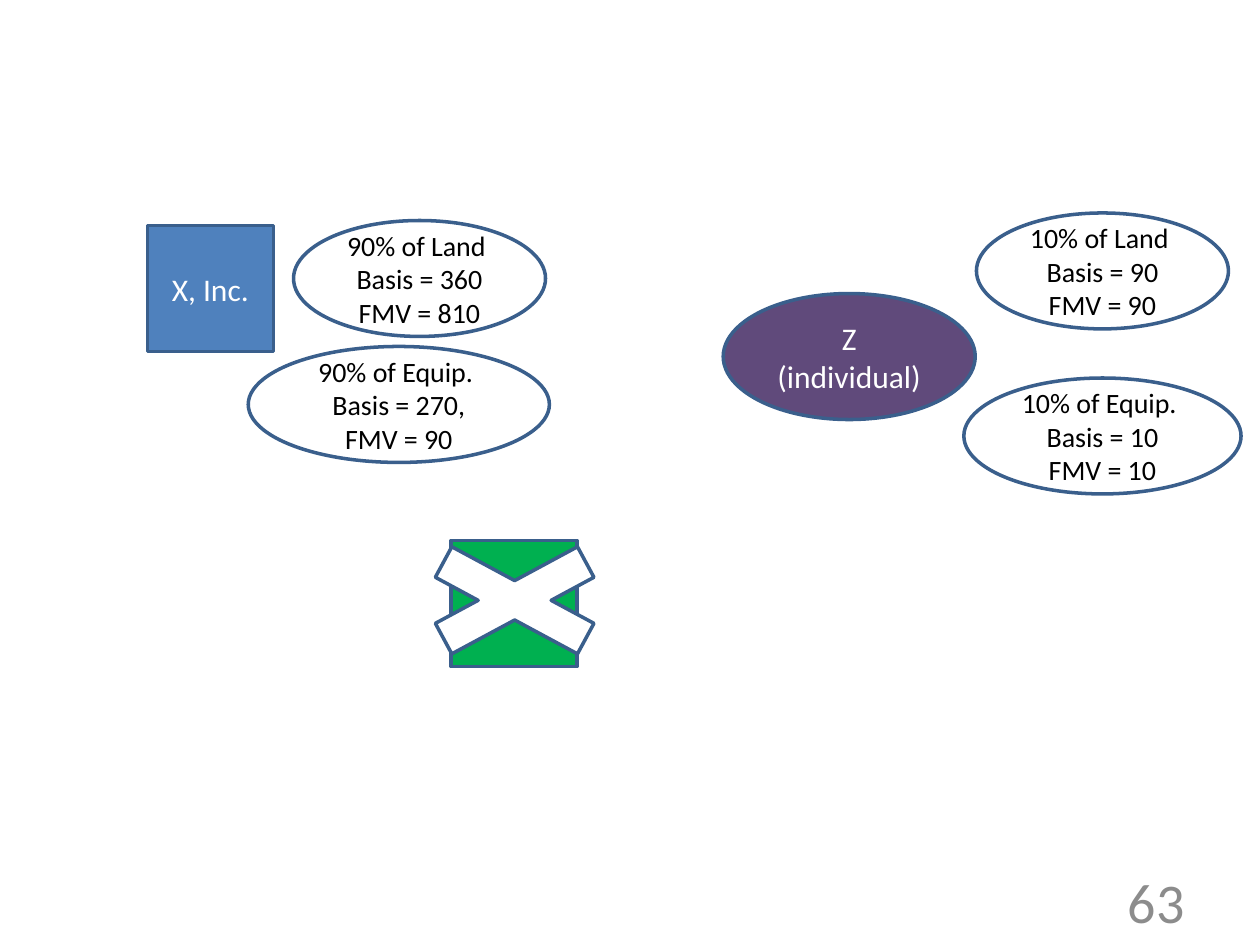
from dataclasses import dataclass

from pptx import Presentation
from pptx.dml.color import RGBColor
from pptx.enum import shapes, text
from pptx.util import Inches, Pt


@dataclass(frozen=True)
class Theme:
    """Colours, font and type sizes of the slide."""
    font: str = "Calibri"
    white: str = "FFFFFF"
    black: str = "000000"
    outline: str = "3A5F8C"
    blue: str = "4F81BD"
    green: str = "00B050"
    purple: str = "604A7B"
    grey: str = "8C8C8C"
    party_size: int = 18
    asset_size: int = 16
    number_size: int = 32
    outline_width: int = 2


THEME = Theme()
KINDS = shapes.MSO_SHAPE


def write_text(shape, lines, size, color, align=text.PP_ALIGN.CENTER):
    """Write each line as a paragraph, centred vertically."""
    frame = shape.text_frame
    frame.word_wrap = True
    frame.vertical_anchor = text.MSO_ANCHOR.MIDDLE
    frame.text = "\n".join(lines)
    for paragraph in frame.paragraphs:
        paragraph.alignment = align
        font = paragraph.runs[0].font
        font.name = THEME.font
        font.size = Pt(size)
        font.color.rgb = RGBColor.from_string(color)


def add_outlined(slide, kind, box, fill):
    """Add a filled shape with the common outline."""
    shape = slide.shapes.add_shape(kind, *map(Inches, box))
    shape.shadow.inherit = False
    shape.fill.solid()
    shape.fill.fore_color.rgb = RGBColor.from_string(fill)
    shape.line.color.rgb = RGBColor.from_string(THEME.outline)
    shape.line.width = Pt(THEME.outline_width)
    return shape


def add_party(slide, kind, box, fill, *lines):
    """Add a company or an individual."""
    shape = add_outlined(slide, kind, box, fill)
    write_text(shape, lines, THEME.party_size, THEME.white)


def add_asset(slide, box, *lines):
    """Add an oval describing a share of an asset."""
    shape = add_outlined(slide, KINDS.OVAL, box, THEME.white)
    write_text(shape, lines, THEME.asset_size, THEME.black)


def add_corporation(slide, left, top):
    """Place X, Inc. and its assets from the top left corner."""
    add_party(slide, KINDS.RECTANGLE, (left, top + 0.04, 1, 1), THEME.blue, "X, Inc.")
    add_asset(slide, (left + 1.16, top, 2, 0.92),
              "90% of Land ", "Basis = 360", "FMV = 810")
    add_asset(slide, (left + 0.8, top + 1, 2.39, 0.92),
              "90% of Equip. ", "Basis = 270, FMV = 90")


def add_individual(slide, left, top):
    """Place Z and its assets from the top left corner."""
    add_party(slide, KINDS.OVAL, (left, top + 0.64, 2, 1), THEME.purple,
              "Z", "(individual)")
    add_asset(slide, (left + 2.01, top, 2, 0.92),
              "10% of Land ", "Basis = 90 FMV = 90")
    add_asset(slide, (left + 1.91, top + 1.31, 2.2, 0.92),
              "10% of Equip. ", "Basis = 10", "FMV = 10")


def add_dissolved_company(slide, left, top):
    """Place the dissolved company and the cross over it."""
    add_outlined(slide, KINDS.RECTANGLE, (left + 0.58, top + 0.11, 1, 1), THEME.green)
    add_outlined(slide, KINDS.MATH_MULTIPLY, (left, top, 2.17, 1.17), THEME.white)


def add_slide_number(slide, box, number):
    """Place the slide number."""
    shape = slide.shapes.add_textbox(*map(Inches, box))
    write_text(shape, [number], THEME.number_size, THEME.grey, text.PP_ALIGN.RIGHT)


def main():
    """Build and save the slide."""
    presentation = Presentation()
    presentation.slide_width = Inches(10)
    presentation.slide_height = Inches(7.5)
    slide = presentation.slides.add_slide(presentation.slide_layouts[6])
    add_corporation(slide, 1.17, 1.75)
    add_individual(slide, 5.74, 1.69)
    add_dissolved_company(slide, 3, 4.18)
    add_slide_number(slide, (7.17, 6.95, 2.33, 0.4), "63")
    presentation.save("out.pptx")


if __name__ == "__main__":
    main()
